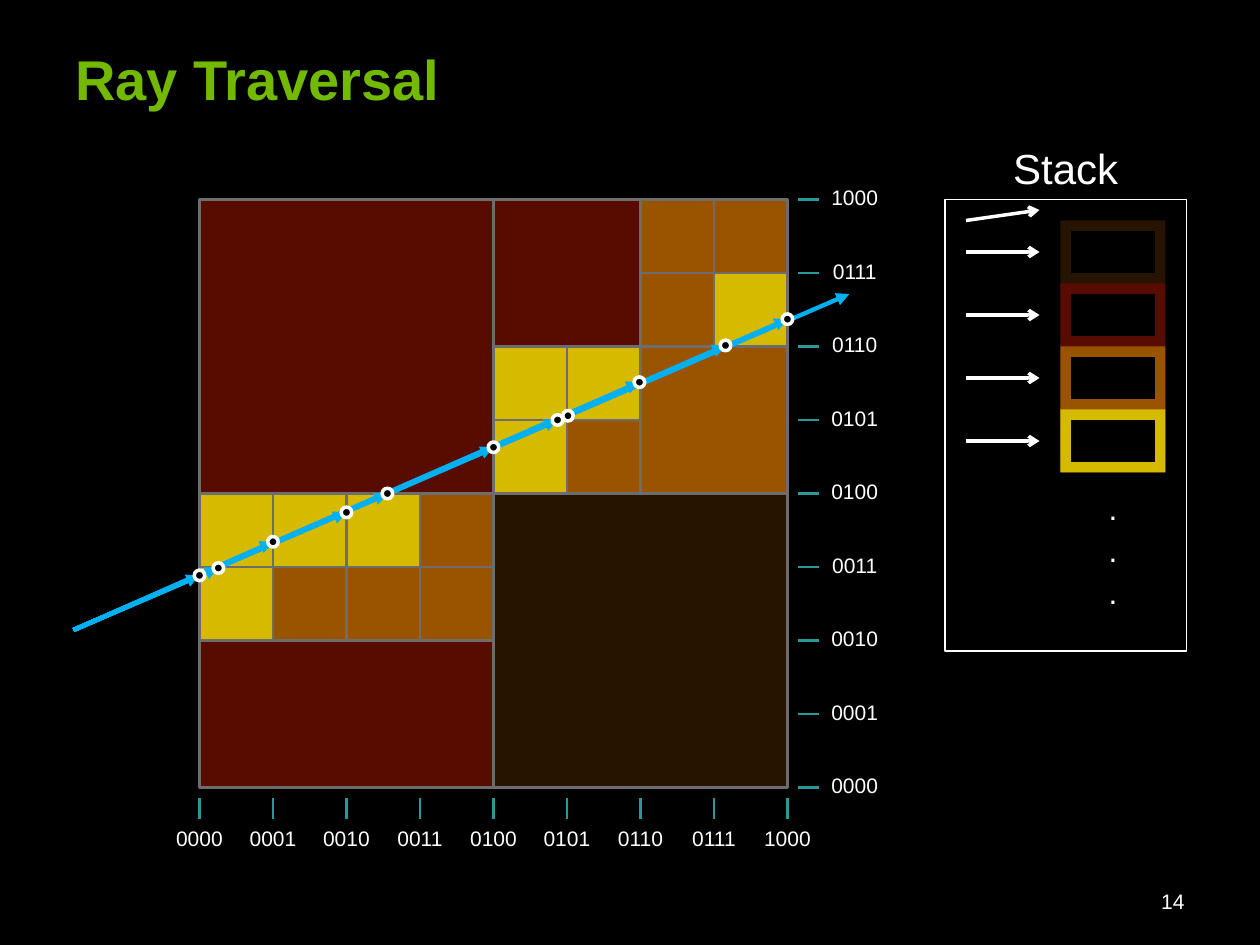
from lxml.etree import SubElement
from pptx import Presentation
from pptx.dml.color import RGBColor
from pptx.enum.shapes import MSO_CONNECTOR, MSO_SHAPE
from pptx.enum.text import MSO_ANCHOR, MSO_AUTO_SIZE, PP_ALIGN
from pptx.oxml.ns import qn
from pptx.util import Pt

EMU_PER_PX = 7620
BLACK, WHITE, GREEN = "000000", "FFFFFF", "73B900"
GRAY, TEAL, BLUE = "6D6D6D", "269999", "00B0F0"

ORIGIN, CELL, CELLS = 190, 70, 8
END = ORIGIN + CELL * CELLS
LEVELS = [
    ("E57300", 17, 8, [(0, 0)]),
    ("C00000", 33, 4, [(4, 0), (0, 4), (0, 0)]),
    ("FFC000", 40, 2, [(6, 2), (6, 0), (0, 4), (2, 4), (4, 2)]),
    ("FFFF00", 60, 1, [(0, 5), (0, 4), (1, 4), (2, 4), (4, 3), (4, 2), (5, 2), (7, 1)]),
]
OUTLINES = [(0, 0, 8), (4, 2, 2), (6, 2, 2), (6, 0, 2)]
DIVIDERS = [
    (4, 0, 4, 8), (0, 6, 4, 6), (2, 4, 2, 6), (1, 4, 1, 6), (0, 5, 2, 5), (5, 2, 5, 4),
    (4, 3, 6, 3), (3, 4, 3, 6), (2, 5, 4, 5), (7, 0, 7, 2), (6, 1, 8, 1), (0, 4, 8, 4),
]
RAY_START, RAY_END = (70, 600), (809, 280)
CROSSINGS = [
    (190, 548), (208, 541), (260, 516), (330, 488), (369, 470), (470, 426),
    (531, 400), (541, 396), (609, 364), (691, 329), (750, 304),
]


def px(value):
    return round(value * EMU_PER_PX)


def color(value):
    return RGBColor.from_string(value)


class SlideBuilder:
    font = "Arial"

    def __init__(self, presentation):
        self.slide = presentation.slides.add_slide(presentation.slide_layouts[6])
        fill = self.slide.background.fill
        fill.solid()
        fill.fore_color.rgb = color(BLACK)

    def shape(self, left, top, width, height, fill=None, alpha=None, line=None,
              weight=1, preset=MSO_SHAPE.RECTANGLE):
        shape = self.slide.shapes.add_shape(preset, px(left), px(top), px(width), px(height))
        shape.shadow.inherit = False
        if fill:
            shape.fill.solid()
            shape.fill.fore_color.rgb = color(fill)
        else:
            shape.fill.background()
        if alpha:
            fill_color = shape.fill._xPr.find(qn("a:solidFill"))[0]
            SubElement(fill_color, qn("a:alpha"), val=str(alpha * 1000))
        if line:
            shape.line.color.rgb = color(line)
            shape.line.width = Pt(weight)
        else:
            shape.line.fill.background()

    def line(self, start, end, stroke, weight, head=None):
        connector = self.slide.shapes.add_connector(
            MSO_CONNECTOR.STRAIGHT, *map(px, (*start, *end)))
        connector.line.color.rgb = color(stroke)
        connector.line.width = Pt(weight)
        if head:
            SubElement(connector.line._get_or_add_ln(), qn("a:tailEnd"), type=head)
        SubElement(connector._element.spPr, qn("a:effectLst"))

    def text(self, left, top, width, height, text, size, align=PP_ALIGN.CENTER,
             fill=WHITE, bold=False, wrap=True, anchor=MSO_ANCHOR.TOP):
        box = self.slide.shapes.add_textbox(px(left), px(top), px(width), px(height))
        text_frame = box.text_frame
        text_frame.text = text
        text_frame.word_wrap = wrap
        text_frame.auto_size = MSO_AUTO_SIZE.NONE
        text_frame.vertical_anchor = anchor
        paragraph = text_frame.paragraphs[0]
        paragraph.alignment = align
        font = paragraph.runs[0].font
        font.name, font.size, font.bold = self.font, Pt(size), bold
        font.color.rgb = color(fill)


def at(cell):
    return ORIGIN + CELL * cell


def draw_tree(builder):
    for fill, alpha, size, corners in LEVELS:
        for column, row in corners:
            builder.shape(at(column), at(row), CELL * size, CELL * size, fill, alpha)
    for column, row, size in OUTLINES:
        builder.shape(at(column), at(row), CELL * size, CELL * size, line=GRAY, weight=1.25)
    for x1, y1, x2, y2 in DIVIDERS:
        builder.line((at(x1), at(y1)), (at(x2), at(y2)), GRAY, 1.25)


def draw_axes(builder):
    for index in range(CELLS + 1):
        label = format(index, "04b")
        x, y = at(index), at(CELLS - index)
        builder.line((x, END + 10), (x, END + 30), TEAL, 1.5)
        builder.text(x - 34, END + 30, 68, 36, label, 12, wrap=False)
        builder.line((END + 10, y), (END + 30, y), TEAL, 1.5)
        builder.text(END + 30, y - 20, 68, 36, label, 12, wrap=False)


def draw_stack(builder):
    builder.text(900, 130, 230, 60, "Stack", 24)
    for index, (fill, alpha, *_) in enumerate(LEVELS):
        offset = 60 * index
        builder.shape(1010, 210 + offset, 100, 240 - offset, fill, alpha)
    builder.shape(900, 190, 230, 430, line=WHITE)
    for index in range(len(LEVELS)):
        offset = 60 * index
        builder.shape(1020, 220 + offset, 80, 40, BLACK)
        builder.line((920, 240 + offset), (990, 240 + offset), WHITE, 2, "arrow")
    builder.line((920, 210), (990, 200), WHITE, 2, "arrow")
    for top in (460, 500, 540):
        builder.text(1010, top, 100, 48, ".", 18)


def draw_ray(builder):
    for end in (RAY_END, *reversed(CROSSINGS)):
        builder.line(RAY_START, end, BLUE, 2.5, "triangle")
    for x, y in CROSSINGS:
        builder.shape(x - 5, y - 5, 10, 10, BLACK, line=WHITE, weight=2, preset=MSO_SHAPE.OVAL)


def main():
    presentation = Presentation()
    presentation.slide_width, presentation.slide_height = px(1200), px(900)
    builder = SlideBuilder(presentation)
    builder.text(60, 36, 970, 76, "Ray Traversal", 32, PP_ALIGN.LEFT, GREEN, bold=True)
    draw_tree(builder)
    draw_axes(builder)
    draw_stack(builder)
    draw_ray(builder)
    builder.text(860, 834, 280, 48, "14", 12, PP_ALIGN.RIGHT, anchor=MSO_ANCHOR.MIDDLE)
    presentation.save("out.pptx")


if __name__ == "__main__":
    main()
